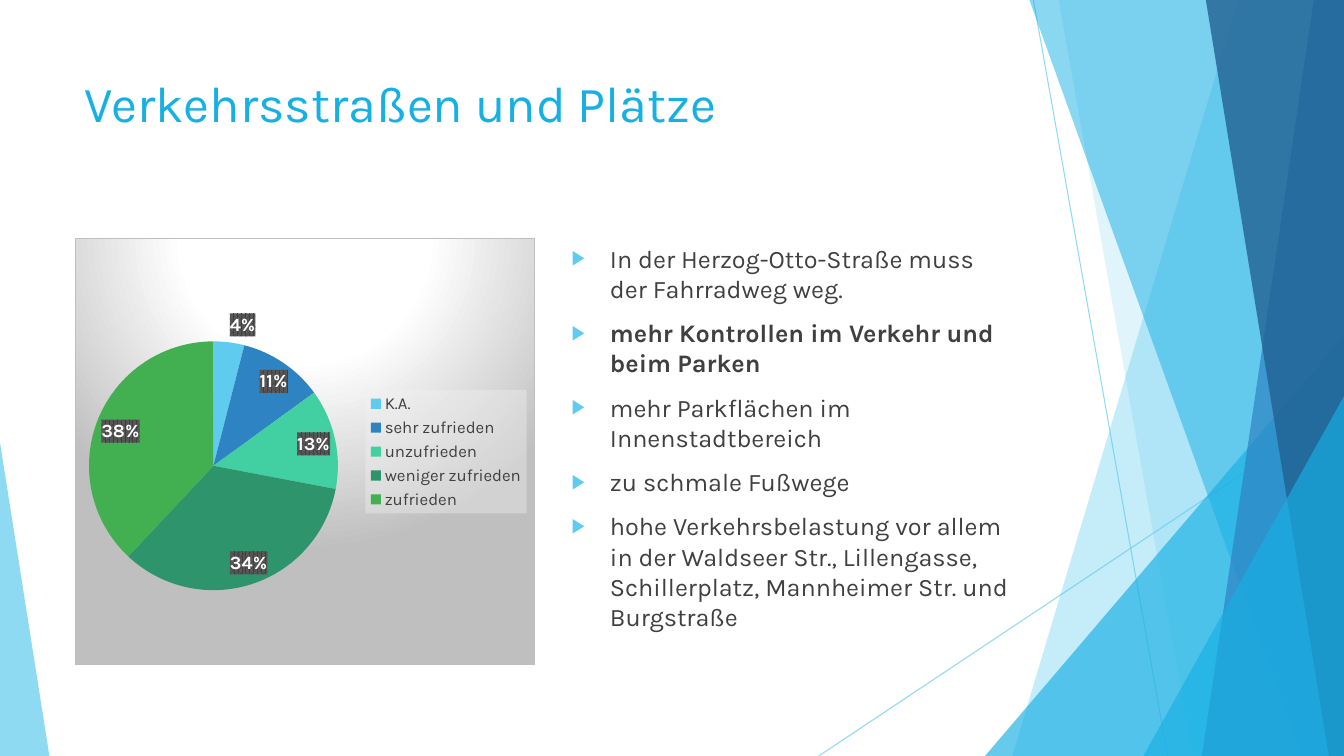
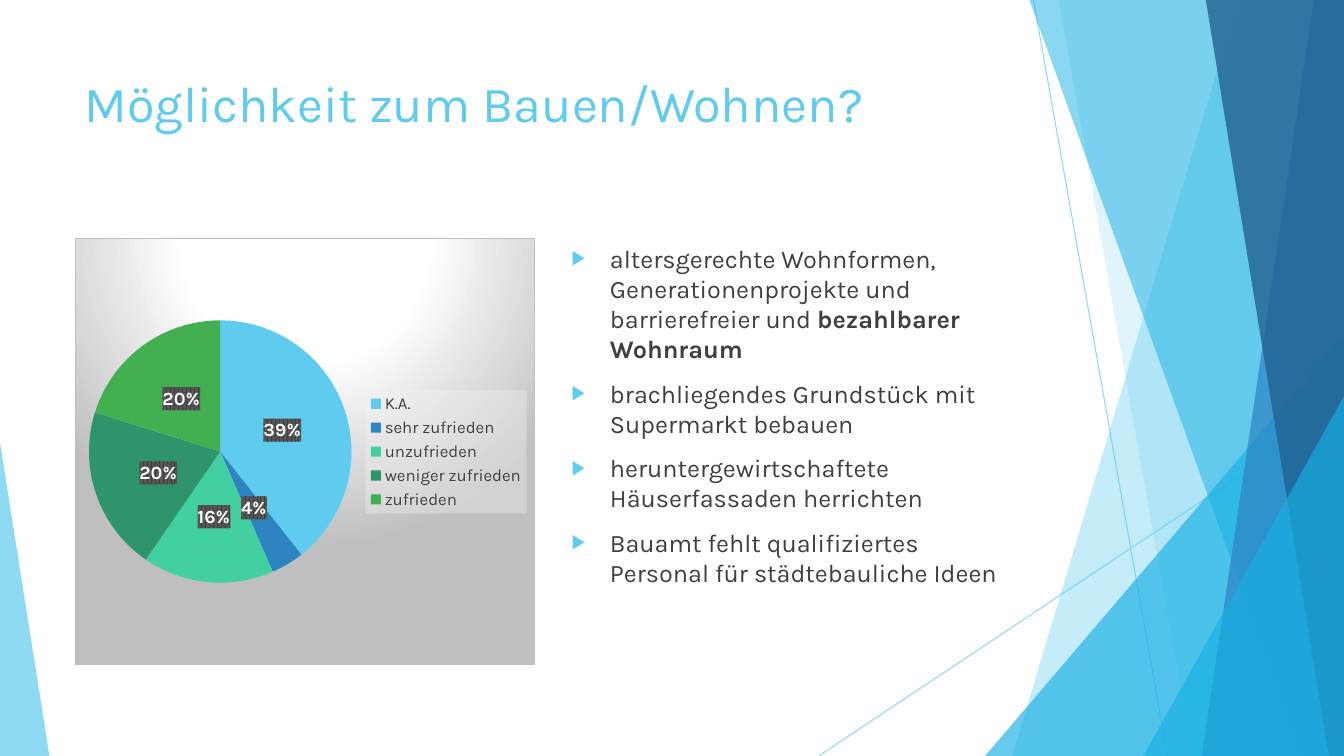
import pptx
import pptx.chart.data
import pptx.dml.color
import pptx.enum.chart
import pptx.enum.shapes
import pptx.enum.text
import pptx.oxml
import pptx.oxml.ns
import pptx.util

THEME = {
    "font": "Karla",
    "sky": "5FCBEF", "cyan": "17B0E4", "blue": "2E83C3", "navy": "226292",
    "text": "404040", "white": "FFFFFF", "black": "000000",
    "slices": ["5FCBEF", "2E83C3", "42D0A2", "2E946B", "42B051"],
    "panel_edge": "BFBFBF", "legend_fill": "F2F2F2", "label_stripe": "595959",
    "title_size": 36, "body_size": 18, "legend_size": 12,
    "label_size": 13.3, "chart_size": 10, "line_width": 0.75,
}

WIDTH, HEIGHT = 13.33, 7.5
LEFT, GUTTER, COLUMN = 0.74, 0.26, 4.57
TITLE_BOX = (LEFT, 0.67, 2 * COLUMN + GUTTER, 1.44)
CHART_BOX, BODY_BOX = [
    (LEFT + column * (COLUMN + GUTTER), 2.36, COLUMN, 4.24) for column in range(2)
]
INDENT = 0.38

FACETS = [
    ("line", (10.25, 0, 11.58, HEIGHT), "sky", 70),
    ("line", (WIDTH, 4.03, 8.12, HEIGHT), "sky", 70),
    ("band", (12.28, 10.04), "sky", 36),
    ("band", (10.5, 11.83), "sky", 20),
    ("right_triangle", (3.56, 4.17), "cyan", 66),
    ("band", (10.21, 12.91), "cyan", 50),
    ("band", (13.03, 11.92), "blue", 70),
    ("band", (11.96, 13.18), "navy", 80),
    ("right_triangle", (1.99, 3.57), "cyan", 66),
    ("left_triangle", (0.49, 3.11), "sky", 70),
]

CATEGORIES = ["K.A.", "sehr zufrieden", "unzufrieden", "weniger zufrieden", "zufrieden"]

SLIDES = [
    {
        "title": "Verkehrsstraßen und Plätze",
        "title_color": "cyan",
        "values": [0.04, 0.11, 0.13, 0.34, 0.38],
        "percentage": False,
        "label_position": pptx.enum.chart.XL_LABEL_POSITION.BEST_FIT,
        "bullets": [
            [("In der Herzog-Otto-Straße muss der Fahrradweg weg.", False)],
            [("mehr Kontrollen im Verkehr und beim Parken", True)],
            [("mehr Parkflächen im Innenstadtbereich", False)],
            [("zu schmale Fußwege", False)],
            [("hohe Verkehrsbelastung vor allem in der Waldseer Str., Lillengasse, "
              "Schillerplatz, Mannheimer Str. und Burgstraße", False)],
        ],
    },
    {
        "title": "Möglichkeit zum Bauen/Wohnen?",
        "title_color": "sky",
        "values": [39, 4, 16, 20, 20],
        "percentage": True,
        "label_position": pptx.enum.chart.XL_LABEL_POSITION.CENTER,
        "bullets": [
            [("altersgerechte Wohnformen, Generationenprojekte und barrierefreier und ", False),
             ("bezahlbarer Wohnraum", True)],
            [("brachliegendes Grundstück mit Supermarkt bebauen", False)],
            [("heruntergewirtschaftete Häuserfassaden herrichten", False)],
            [("Bauamt fehlt qualifiziertes Personal für städtebauliche Ideen", False)],
        ],
    },
]


def rgb(value):
    return pptx.dml.color.RGBColor.from_string(value)


def inches(values):
    return [pptx.util.Inches(value) for value in values]


def xml(markup):
    tag, rest = markup[1:].split(" ", 1) if " " in markup.split(">")[0] else markup[1:].split(">", 1)
    separator = " " if " " in markup.split(">")[0] else ">"
    namespaces = pptx.oxml.ns.nsdecls("a", "c")
    return pptx.oxml.parse_xml(f"<{tag} {namespaces}{separator}{rest}")


def solid(color, alpha=100):
    return (f'<a:solidFill><a:srgbClr val="{color}"><a:alpha val="{alpha * 1000}"/>'
            "</a:srgbClr></a:solidFill>")


def style_font(font, size, color, bold=False):
    font.name = THEME["font"]
    font.size = pptx.util.Pt(size)
    font.bold = bold
    font.color.rgb = rgb(color)


def draw_facet(shapes, kind, geometry, color, alpha):
    if kind == "line":
        shape = shapes.add_connector(pptx.enum.shapes.MSO_CONNECTOR.STRAIGHT, *inches(geometry))
        shape.line.color.rgb = rgb(THEME[color])
        shape.line.width = pptx.util.Pt(THEME["line_width"])
        shape.element.spPr.append(xml("<a:effectLst/>".replace("/>", " />")))
    else:
        if kind == "band":
            top, bottom = geometry
            outline = shapes.build_freeform(*inches((top, 0)), scale=1.0)
            corners = [(WIDTH, 0), (WIDTH, HEIGHT), (bottom, HEIGHT)]
            outline.add_line_segments([inches(corner) for corner in corners], close=True)
            shape = outline.convert_to_shape()
        else:
            width, height = geometry
            on_right = kind == "right_triangle"
            left = WIDTH - width if on_right else 0
            shape = shapes.add_shape(
                pptx.enum.shapes.MSO_SHAPE.ISOSCELES_TRIANGLE,
                *inches((left, HEIGHT - height, width, height)))
            shape.adjustments[0] = 1 if on_right else 0
        shape.shadow.inherit = False
        shape.fill.solid()
        shape.fill.fore_color.rgb = rgb(THEME[color])
        shape.line.fill.background()
    for node in shape.element.xpath(".//a:srgbClr"):
        node.append(xml(f'<a:alpha val="{alpha * 1000}"/>'))
    return shape


def decorate_master(presentation, slide):
    tree = presentation.slide_master.shapes.element
    for position, facet in enumerate(FACETS):
        element = draw_facet(slide.shapes, *facet).element
        element.xpath(".//p:cNvPr")[0].set("id", str(100 + position))
        tree.insert(2 + position, element)


def place(shape, box):
    shape.left, shape.top, shape.width, shape.height = inches(box)


def prepare_text(placeholder, box):
    place(placeholder, box)
    frame = placeholder.text_frame
    frame.word_wrap = True
    frame.auto_size = pptx.enum.text.MSO_AUTO_SIZE.NONE
    frame.vertical_anchor = pptx.enum.text.MSO_ANCHOR.TOP
    return frame


def add_run(paragraph, text, size, color, bold=False):
    run = paragraph.add_run()
    run.text = text
    style_font(run.font, size, color, bold)


def fill_title(slide, content):
    paragraph = prepare_text(slide.shapes.title, TITLE_BOX).paragraphs[0]
    paragraph.alignment = pptx.enum.text.PP_ALIGN.LEFT
    add_run(paragraph, content["title"], THEME["title_size"], THEME[content["title_color"]])


def fill_body(slide, bullets):
    frame = prepare_text(slide.placeholders[1], BODY_BOX)
    for index, runs in enumerate(bullets):
        paragraph = frame.add_paragraph() if index else frame.paragraphs[0]
        paragraph.space_before = pptx.util.Pt(10)
        properties = paragraph._p.get_or_add_pPr()
        properties.set("marL", str(pptx.util.Inches(INDENT)))
        properties.set("indent", str(-pptx.util.Inches(INDENT)))
        for markup in (f'<a:buClr><a:srgbClr val="{THEME["sky"]}"/></a:buClr>',
                       '<a:buSzPct val="80000"/>', '<a:buChar char="▶"/>'):
            properties.append(xml(markup))
        for text, bold in runs:
            add_run(paragraph, text, THEME["body_size"], THEME["text"], bold)


def set_background(element, fill, line="<a:ln><a:noFill/></a:ln>"):
    text_properties = element.find(pptx.oxml.ns.qn("c:txPr"))
    text_properties.addprevious(xml(f"<c:spPr>{fill}{line}</c:spPr>"))


def add_pie(slide, content):
    data = pptx.chart.data.CategoryChartData()
    data.categories = CATEGORIES
    data.add_series("Series 1", content["values"])
    chart = slide.shapes.add_chart(
        pptx.enum.chart.XL_CHART_TYPE.PIE, *inches(CHART_BOX), data).chart
    chart.has_title = False
    style_font(chart.font, THEME["chart_size"], THEME["black"])
    chart_space = chart.element
    chart_space.find(pptx.oxml.ns.qn("c:chart")).addprevious(xml('<c:roundedCorners val="0"/>'))
    stops = "".join(
        f'<a:gs pos="{position * 1000}"><a:srgbClr val="{color}"/></a:gs>'
        for position, color in [(0, THEME["white"]), (39, THEME["white"]), (100, THEME["panel_edge"])])
    gradient = (f'<a:gradFill><a:gsLst>{stops}</a:gsLst><a:path path="circle">'
                '<a:fillToRect l="50000" t="-80000" r="50000" b="180000"/></a:path></a:gradFill>')
    edge = f'<a:ln w="{pptx.util.Pt(THEME["line_width"])}">{solid(THEME["panel_edge"])}</a:ln>'
    set_background(chart_space, gradient, edge)

    chart.has_legend = True
    legend = chart.legend
    legend.position = pptx.enum.chart.XL_LEGEND_POSITION.RIGHT
    legend.include_in_layout = False
    style_font(legend.font, THEME["legend_size"], THEME["text"])
    set_background(legend._element, solid(THEME["legend_fill"], 39))

    plot = chart.plots[0]
    plot.vary_by_categories = True
    series = plot.series[0]
    for index, color in enumerate(THEME["slices"]):
        fill = series.points[index].format.fill
        fill.solid()
        fill.fore_color.rgb = rgb(color)
    labels = series.data_labels
    labels.show_value = not content["percentage"]
    labels.show_percentage = content["percentage"]
    labels.number_format = "0%"
    labels.number_format_is_linked = False
    labels.position = content["label_position"]
    style_font(labels.font, THEME["label_size"], THEME["white"], True)
    set_background(
        labels._element,
        f'<a:pattFill prst="pct75"><a:fgClr><a:srgbClr val="{THEME["text"]}"/></a:fgClr>'
        f'<a:bgClr><a:srgbClr val="{THEME["label_stripe"]}"/></a:bgClr></a:pattFill>')


def main():
    presentation = pptx.Presentation()
    presentation.slide_width, presentation.slide_height = inches((WIDTH, HEIGHT))
    for index, content in enumerate(SLIDES):
        slide = presentation.slides.add_slide(presentation.slide_layouts[1])
        if index == 0:
            decorate_master(presentation, slide)
        fill_title(slide, content)
        fill_body(slide, content["bullets"])
        add_pie(slide, content)
    presentation.save("out.pptx")


if __name__ == "__main__":
    main()
